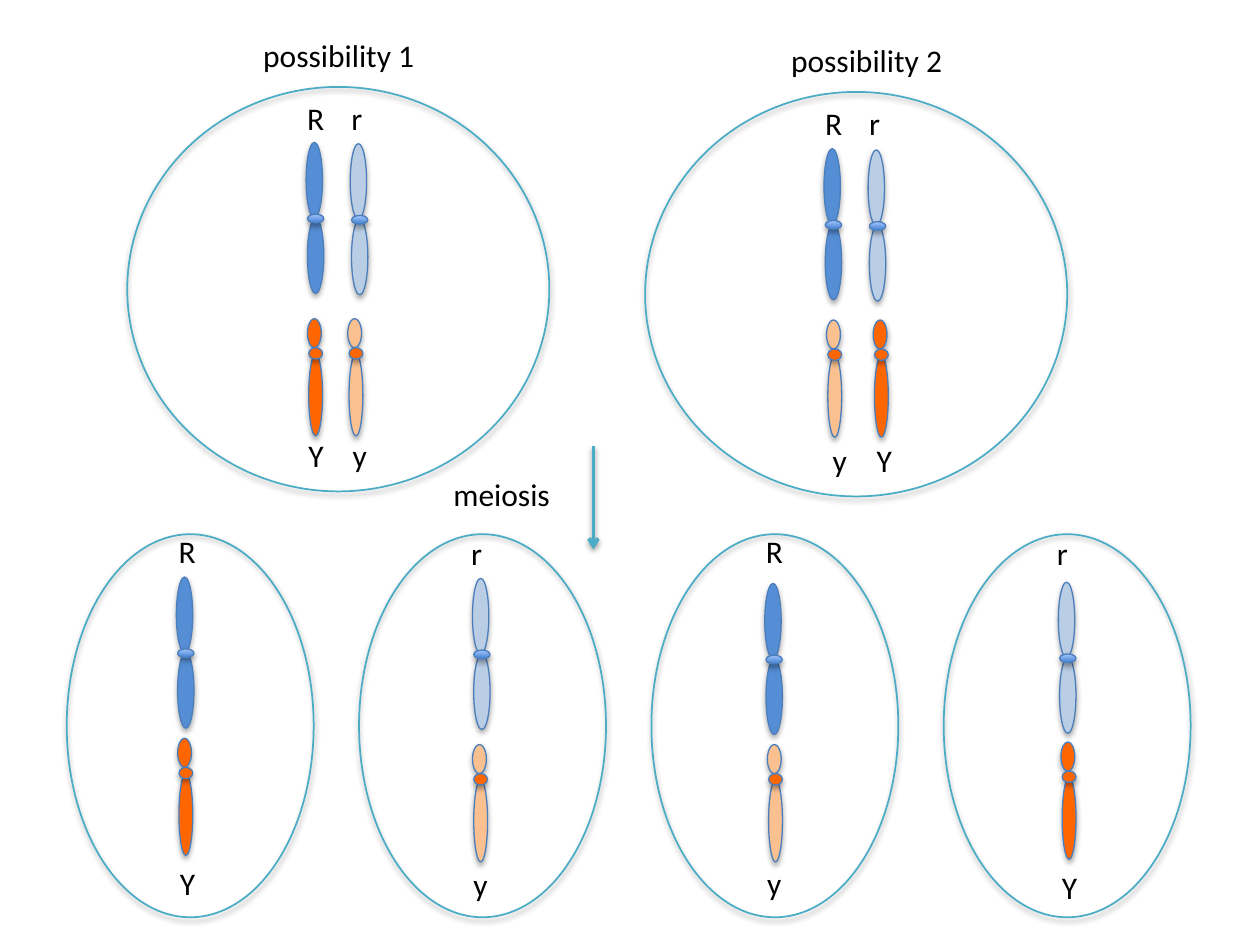
import pptx
import pptx.util
import pptx.dml.color
import pptx.enum.shapes
import pptx.enum.text
import pptx.oxml
import pptx.oxml.ns

Inches = pptx.util.Inches
RGB = pptx.dml.color.RGBColor
TEAL = RGB(0x4B, 0xAC, 0xC6)
EDGE = RGB(0x4B, 0x7E, 0xBC)
BLUE = RGB(0x55, 0x8E, 0xD5)
PALE = RGB(0xB9, 0xCD, 0xE5)
ORANGE = RGB(0xFF, 0x66, 0x00)
PEACH = RGB(0xFA, 0xC0, 0x90)
DEEP = RGB(0x3F, 0x80, 0xCE)
LIGHT = RGB(0xA4, 0xC4, 0xFF)
BLACK = RGB(0, 0, 0)

FONT = {"name": "Calibri", "size": pptx.util.Pt(18)}
FRAME = {"auto_size": pptx.enum.text.MSO_AUTO_SIZE.SHAPE_TO_FIT_TEXT}
TAB = 0.35

TINTS = {"R": BLUE, "r": PALE, "Y": ORANGE, "y": PEACH}
LONG = [(0, 0, 0.13, 0.6), (0.01, 0.6, 0.13, 0.6), (0.01, 0.57, 0.13, 0.07)]
SHORT = [(0, 0, 0.11, 0.23), (0.01, 0.28, 0.11, 0.65), (0.01, 0.23, 0.11, 0.09)]


def apply(item, values):
    for key, value in values.items():
        setattr(item, key, value)


def oval(shapes, box, color, width):
    shape = shapes.add_shape(
        pptx.enum.shapes.MSO_SHAPE.OVAL, *[Inches(n) for n in box])
    shape.line.color.rgb = color
    shape.line.width = pptx.util.Pt(width)
    return shape


def label(slide, text, left, top, width, wrap=False):
    box = slide.shapes.add_textbox(*[Inches(n) for n in (left, top, width, 0.4)])
    apply(box.text_frame, {**FRAME, "word_wrap": wrap})
    para = box.text_frame.paragraphs[0]
    run = para.add_run()
    run.text = text
    apply(run.font, FONT)
    run.font.color.rgb = BLACK
    return para


def pair(slide, genes, left, top):
    para = label(slide, "\t".join(genes), left, top, 0.7, True)
    props = para._p.get_or_add_pPr()
    props.append(pptx.oxml.parse_xml(
        f'<a:tabLst {pptx.oxml.ns.nsdecls("a")}>'
        f'<a:tab pos="{Inches(TAB)}" algn="l"/></a:tabLst>'))


def strand(slide, gene, left, top):
    group = slide.shapes.add_group_shape()
    is_long = gene in "Rr"
    parts = LONG if is_long else SHORT
    for x, y, width, height in parts:
        part = oval(group.shapes, (left + x, top + y, width, height), EDGE, 0.75)
        part.fill.solid()
        part.fill.fore_color.rgb = TINTS[gene]
    if is_long:
        part.fill.gradient()
        part.fill.gradient_angle = 90
        for stop, color, place in zip(part.fill.gradient_stops, (DEEP, LIGHT), (0, 1)):
            apply(stop, {"position": place})
            stop.color.rgb = color
    else:
        part.fill.fore_color.rgb = ORANGE


def cell(slide, box, strands):
    oval(slide.shapes, box, TEAL, 1).fill.background()
    for gene, x, y in strands:
        strand(slide, gene, box[0] + x, box[1] + y)


def parent(slide, box, title, shift, strands, lower, inset):
    left, top = box[:2]
    cell(slide, box, strands)
    label(slide, title, left + shift, top - 0.45, 1.41)
    pair(slide, "Rr", left + 1.33, top + 0.05)
    pair(slide, lower, left + inset, top + 2.72)


def gamete(slide, box, strands, upper, lower):
    left, top = box[:2]
    cell(slide, box, strands)
    genes = [item[0] for item in strands]
    width = 0.34 if genes[0] == "R" else 0.29
    label(slide, genes[0], left + upper[0], top + upper[1], width)
    label(slide, genes[1], left + lower[0], top + lower[1], 0.34, True)


def step(slide, left, top, height):
    arrow = slide.shapes.add_connector(
        pptx.enum.shapes.MSO_CONNECTOR.STRAIGHT,
        *[Inches(n) for n in (left, top, left, top + height)])
    arrow.line.color.rgb = TEAL
    arrow.line.width = pptx.util.Pt(2)
    arrow.line._get_or_add_ln().append(pptx.oxml.parse_xml(
        f'<a:tailEnd {pptx.oxml.ns.nsdecls("a")} type="arrow"/>'))
    label(slide, "meiosis", left - 1.21, top + 0.18, 0.98)


PARENTS = [
    ((1.01, 0.69), "possibility 1", 0.98,
     [("R", 1.42, 0.44), ("Y", 1.43, 1.84), ("y", 1.75, 1.84), ("r", 1.77, 0.45)],
     "Yy", 1.34),
    ((5.12, 0.73), "possibility 2", 1.06,
     [("R", 1.42, 0.45), ("Y", 1.81, 1.81), ("y", 1.44, 1.81), ("r", 1.77, 0.46)],
     "yY", 1.39),
]
GAMETES = [
    ([("R", 0.87, 0.34), ("Y", 0.88, 1.62)], (0.79, -0.07), (0.8, 2.57)),
    ([("r", 0.9, 0.35), ("y", 0.9, 1.67)], (0.79, -0.05), (0.81, 2.58)),
    ([("R", 0.9, 0.39), ("y", 0.92, 1.67)], (0.81, -0.07), (0.82, 2.57)),
    ([("r", 0.91, 0.38), ("Y", 0.93, 1.65)], (0.8, -0.05), (0.84, 2.6)),
]


def main():
    deck = pptx.Presentation()
    apply(deck, {"slide_width": Inches(10), "slide_height": Inches(7.5)})
    slide = deck.slides.add_slide(deck.slide_layouts[6])
    for spot, *rest in PARENTS:
        parent(slide, (*spot, 3.35, 3.21), *rest)
    step(slide, 4.71, 3.54, 0.82)
    for index, rest in enumerate(GAMETES):
        gamete(slide, (0.53 + 2.32 * index, 4.24, 1.96, 3.04), *rest)
    deck.save("out.pptx")


if __name__ == "__main__":
    main()
